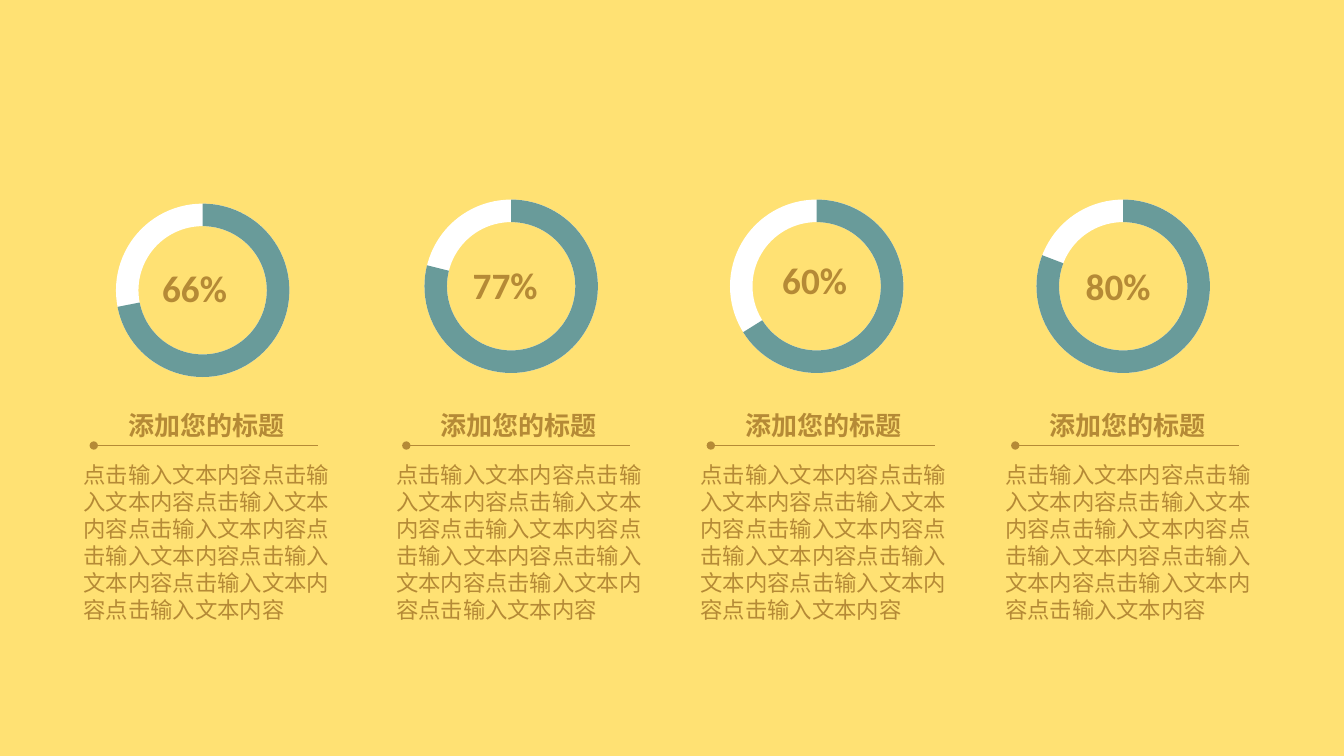
from pptx import Presentation
from pptx import util as u
from pptx.dml.color import RGBColor
from pptx.enum import shapes, text
from pptx.oxml.ns import qn
from lxml import etree

COLORS = {"bg": "FFE173", "rest": "FFFFFF", "arc": "699B9A", "text": "B58A36"}
FONTS = {"number": "Calibri", "text": "Noto Sans CJK SC"}
TITLE = "添加您的标题"
BODY = "点击输入文本内容" * 8
ITEMS = [
    {"label": "66%", "sweep": 259, "ring": (1.15, 2.02), "number": (1.51, 2.58), "left": 0.73},
    {"label": "77%", "sweep": 284, "ring": (4.21, 1.98), "number": (4.59, 2.55), "left": 3.83},
    {"label": "60%", "sweep": 238, "ring": (7.24, 1.98), "number": (7.66, 2.5), "left": 6.85},
    {"label": "80%", "sweep": 291, "ring": (10.28, 1.98), "number": (10.67, 2.56), "left": 9.87},
]
RING_SIZE, RING_RATIO = 1.72, 0.13
DEGREE = 0.6
TOP_ANGLE = 270


def rgb(name):
    return RGBColor.from_string(COLORS[name])


def add_ring_part(slide, kind, at, color, adjustments):
    sp = slide.shapes.add_shape(kind, *map(u.Inches, (*at, RING_SIZE, RING_SIZE)))
    for i, value in enumerate(adjustments):
        sp.adjustments[i] = value
    sp.shadow.inherit = False
    sp.fill.solid()
    sp.fill.fore_color.rgb = rgb(color)
    sp.line.fill.background()


def add_text(slide, box, content, size, font, bold=False, align=text.PP_ALIGN.LEFT):
    tf = slide.shapes.add_textbox(*map(u.Inches, box)).text_frame
    tf.word_wrap = True
    p = tf.paragraphs[0]
    p.alignment = align
    r = p.add_run()
    r.text = content
    r.font.size = u.Pt(size)
    r.font.bold = bold
    r.font.name = FONTS[font]
    r.font.color.rgb = rgb("text")
    etree.SubElement(r.font._element, qn("a:ea"), typeface=FONTS[font])


def add_rule(slide, left, right, y):
    line = slide.shapes.add_connector(
        shapes.MSO_CONNECTOR.STRAIGHT, *map(u.Inches, (left, y, right, y)))
    line.line.color.rgb = rgb("text")
    line.line.width = u.Pt(0.75)
    etree.SubElement(line.line._get_or_add_ln(), qn("a:headEnd"), type="oval")
    etree.SubElement(line._element.spPr, qn("a:effectLst"))


def add_item(slide, item):
    add_ring_part(slide, shapes.MSO_SHAPE.DONUT, item["ring"], "rest", [RING_RATIO])
    end = (TOP_ANGLE + item["sweep"]) % 360
    add_ring_part(slide, shapes.MSO_SHAPE.BLOCK_ARC, item["ring"], "arc",
                  [TOP_ANGLE * DEGREE, end * DEGREE, RING_RATIO])
    add_text(slide, (*item["number"], 1.19, 0.55), item["label"], 26.6, "number", True)
    left = item["left"]
    add_text(slide, (left + 0.05, 4.01, 2.53, 0.42), TITLE, 18.6, "text", True,
             text.PP_ALIGN.CENTER)
    add_text(slide, (left, 4.53, 2.73, 1.72), BODY, 16, "text")
    add_rule(slide, left + 0.2, left + 2.42, 4.42)


def main():
    """Build a slide of four percentage rings with captions."""
    prs = Presentation()
    prs.slide_width, prs.slide_height = u.Inches(13.33), u.Inches(7.5)
    slide = prs.slides.add_slide(prs.slide_layouts[6])
    slide.background.fill.solid()
    slide.background.fill.fore_color.rgb = rgb("bg")
    for item in ITEMS:
        add_item(slide, item)
    prs.save("out.pptx")


if __name__ == "__main__":
    main()
